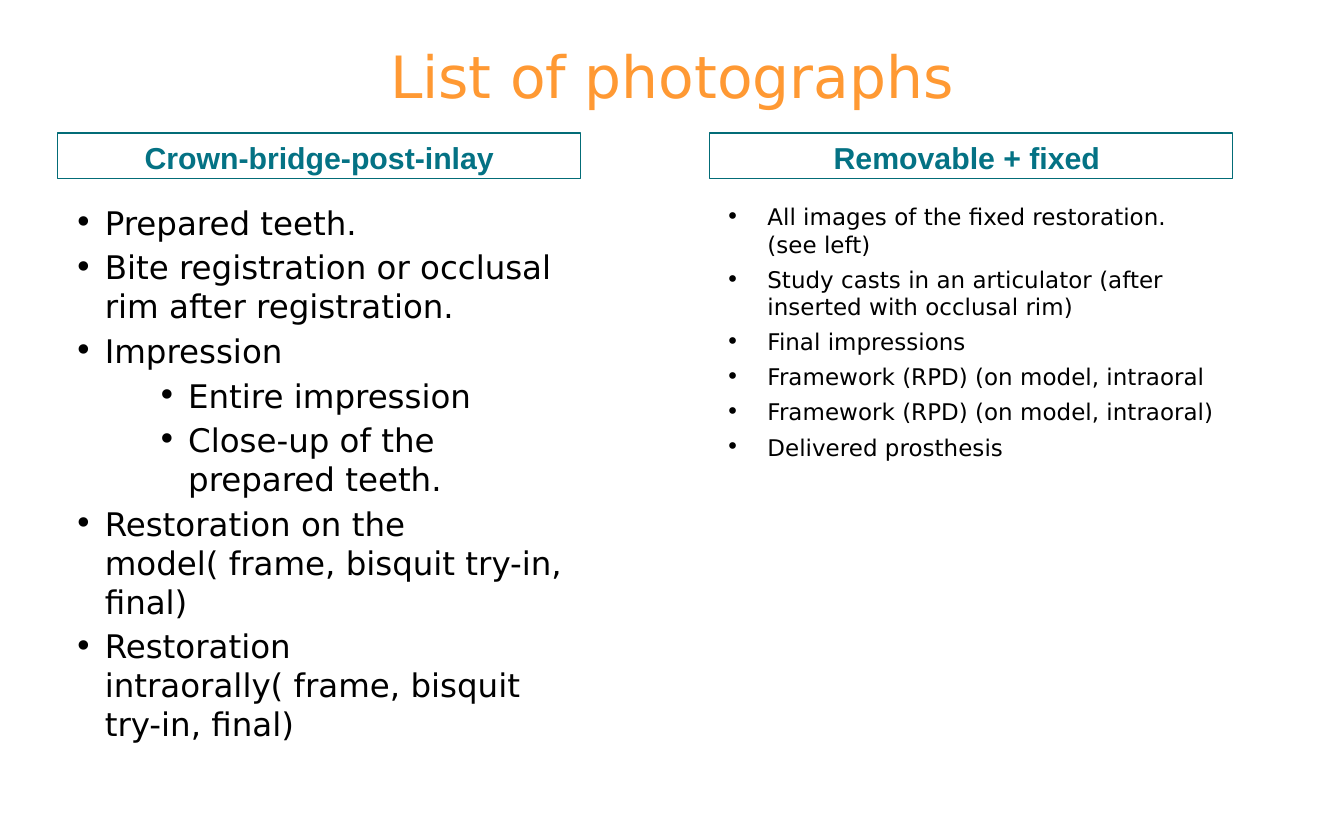
from dataclasses import dataclass

from lxml import etree
from pptx import Presentation
from pptx.dml.color import RGBColor
from pptx.enum import shapes, text
from pptx.oxml.ns import qn
from pptx.util import Inches, Pt


@dataclass(frozen=True)
class Theme:
    title_color: str = "FF9933"
    body_color: str = "000000"
    heading_color: str = "047284"
    border_color: str = "036C77"
    body_font: str = "DejaVu Sans"
    heading_font: str = "Arial"
    title_size: float = 31.2
    heading_size: float = 16.2


@dataclass(frozen=True)
class Item:
    text: str
    level: int = 0


@dataclass(frozen=True)
class Column:
    heading: str
    heading_left: float
    list_left: float
    list_height: float
    size: float
    hanging: float
    space_before: float
    items: tuple[Item, ...]


THEME = Theme()
SUBITEM_INDENT = 0.85

COLUMNS = (
    Column("Crown-bridge-post-inlay", 0.43, 0.5, 4.27, 17.4, 0.23, 3, (
        Item("Prepared teeth."),
        Item("Bite registration or occlusal rim after registration."),
        Item("Impression"),
        Item("Entire impression", level=2),
        Item("Close-up of the prepared teeth.", level=2),
        Item("Restoration on the model( frame, bisquit try-in, final)"),
        Item("Restoration intraorally( frame, bisquit try-in, final)"),
    )),
    Column("Removable + fixed ", 5.28, 5.35, 2.5, 12.3, 0.31, 4, (
        Item("All images of the fixed restoration. (see left)"),
        Item("Study casts in an articulator (after inserted with occlusal rim)"),
        Item("Final impressions"),
        Item("Framework (RPD) (on model, intraoral"),
        Item("Framework (RPD) (on model, intraoral)"),
        Item("Delivered prosthesis"),
    )),
)


def add_text_frame(parent, left: float, top: float, width: float, height: float,
                   anchor=text.MSO_ANCHOR.MIDDLE):
    """Add a wrapping text box with narrow margins and return its frame."""
    box = parent.add_textbox(Inches(left), Inches(top), Inches(width), Inches(height))
    frame = box.text_frame
    frame.word_wrap = True
    frame.vertical_anchor = anchor
    frame.margin_left = frame.margin_right = Inches(0.05)
    frame.margin_top = frame.margin_bottom = Inches(0.05)
    return frame


def write(paragraph, content: str, *, size: float, color: str,
          font: str = THEME.body_font, bold: bool = False,
          align=text.PP_ALIGN.LEFT, space_before: float = 0) -> None:
    paragraph.alignment = align
    paragraph.space_before = Pt(space_before)
    run = paragraph.add_run()
    run.text = content
    run.font.name = font
    run.font.size = Pt(size)
    run.font.bold = bold
    run.font.color.rgb = RGBColor.from_string(color)


def add_bullet(paragraph, indent: float, hanging: float) -> None:
    properties = paragraph._p.get_or_add_pPr()
    properties.set("marL", str(Inches(indent)))
    properties.set("indent", str(-Inches(hanging)))
    etree.SubElement(properties, qn("a:buFont"), typeface=THEME.body_font)
    etree.SubElement(properties, qn("a:buChar"), char="•")


def add_heading(slide, column: Column) -> None:
    top, width = 0.99, 3.89
    group = slide.shapes.add_group_shape().shapes
    border = group.add_shape(shapes.MSO_SHAPE.RECTANGLE, Inches(column.heading_left),
                             Inches(top), Inches(width), Inches(0.34))
    border.shadow.inherit = False
    border.fill.background()
    border.line.color.rgb = RGBColor.from_string(THEME.border_color)
    border.line.width = Pt(0.75)
    frame = add_text_frame(group, column.heading_left, top, width, 0.36)
    write(frame.paragraphs[0], column.heading, size=THEME.heading_size,
          color=THEME.heading_color, font=THEME.heading_font, bold=True,
          align=text.PP_ALIGN.CENTER, space_before=9)


def add_list(slide, column: Column) -> None:
    frame = add_text_frame(slide.shapes, column.list_left, 1.46, 3.75,
                           column.list_height, text.MSO_ANCHOR.TOP)
    for index, item in enumerate(column.items):
        paragraph = frame.add_paragraph() if index else frame.paragraphs[0]
        paragraph.level = item.level
        write(paragraph, item.text, size=column.size, color=THEME.body_color,
              space_before=column.space_before)
        add_bullet(paragraph, SUBITEM_INDENT if item.level else column.hanging,
                   column.hanging)


def main() -> None:
    presentation = Presentation()
    presentation.slide_width = Inches(10)
    presentation.slide_height = Inches(6.25)
    slide = presentation.slides.add_slide(presentation.slide_layouts[6])

    # Title
    title = add_text_frame(slide.shapes, 0.5, 0.25, 9, 0.62)
    write(title.paragraphs[0], "List of photographs", size=THEME.title_size,
          color=THEME.title_color, align=text.PP_ALIGN.CENTER)

    # Two headed lists
    for column in COLUMNS:
        add_list(slide, column)
        add_heading(slide, column)

    presentation.save("out.pptx")


if __name__ == "__main__":
    main()
